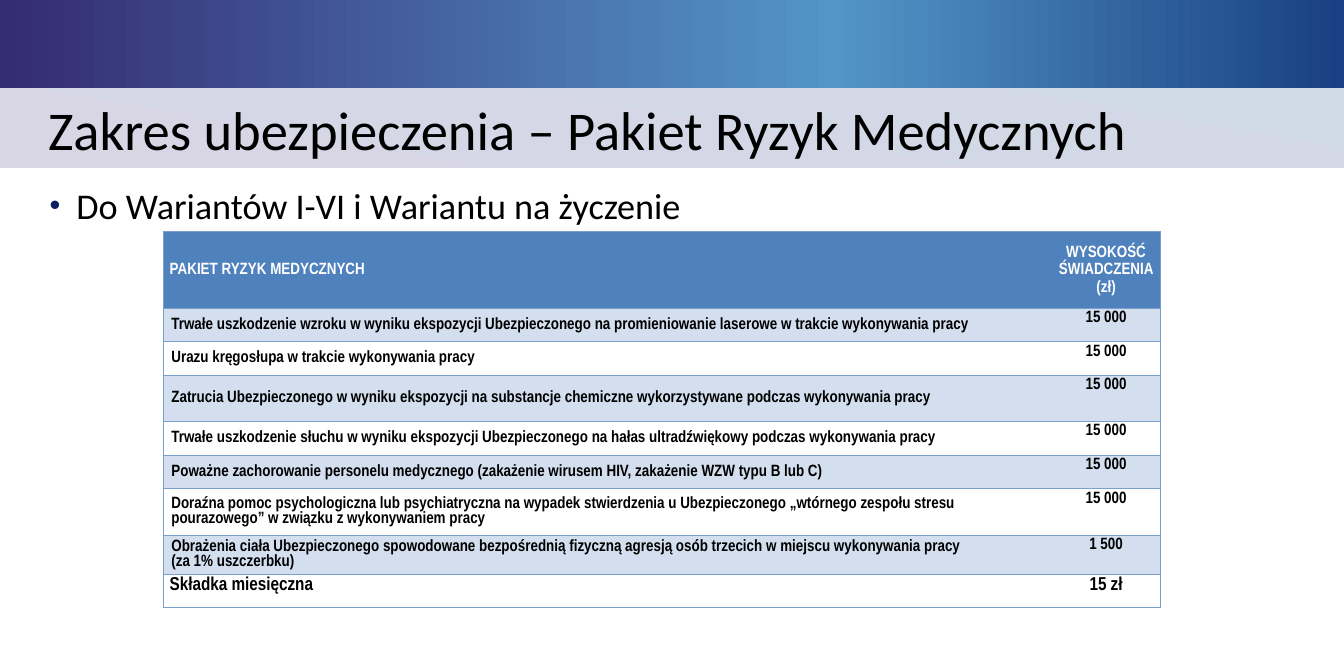
from lxml import etree
from pptx import Presentation
from pptx.dml.color import RGBColor
from pptx.enum.shapes import MSO_SHAPE
from pptx.enum.text import MSO_ANCHOR, MSO_AUTO_SIZE, PP_ALIGN
from pptx.oxml.ns import qn
from pptx.util import Inches, Pt

RECTANGLE = MSO_SHAPE.RECTANGLE
TOP, MIDDLE, BOTTOM = MSO_ANCHOR.TOP, MSO_ANCHOR.MIDDLE, MSO_ANCHOR.BOTTOM
LEFT, CENTER, JUSTIFY = PP_ALIGN.LEFT, PP_ALIGN.CENTER, PP_ALIGN.JUSTIFY
NO_FIT, GROW = MSO_AUTO_SIZE.NONE, MSO_AUTO_SIZE.SHAPE_TO_FIT_TEXT

BLACK = RGBColor(0x00, 0x00, 0x00)
WHITE = RGBColor(0xFF, 0xFF, 0xFF)
HEADER_BLUE = RGBColor(0x4F, 0x81, 0xBD)
ROW_BLUE = RGBColor(0xD3, 0xDF, 0xEE)
BORDER_BLUE = RGBColor(0x7B, 0xA0, 0xCD)
BULLET_NAVY = RGBColor(0x0A, 0x1E, 0x64)
PALE_BLUE = RGBColor(0xD0, 0xDA, 0xE7)
LAVENDER = RGBColor(0xD8, 0xD5, 0xE5)
VIOLET = RGBColor(0x35, 0x2C, 0x73)
SKY = RGBColor(0x53, 0x95, 0xC7)
NAVY = RGBColor(0x19, 0x40, 0x82)

TITLE_FONT, TABLE_FONT = "Calibri", "Arial Narrow"
SLIDE_WIDTH, SLIDE_HEIGHT = Inches(16), Inches(7.69)
COLUMN, ROW = SLIDE_WIDTH / 100, SLIDE_HEIGHT / 100

HEADER = ("PAKIET RYZYK MEDYCZNYCH", "WYSOKOŚĆ ŚWIADCZENIA (zł)")
BENEFITS = [
    (["Trwałe uszkodzenie wzroku w wyniku ekspozycji Ubezpieczonego na promieniowanie "
      "laserowe w trakcie wykonywania pracy"], "15 000"),
    (["Urazu kręgosłupa w trakcie wykonywania pracy"], "15 000"),
    (["Zatrucia Ubezpieczonego w wyniku ekspozycji na substancje chemiczne "
      "wykorzystywane podczas wykonywania pracy"], "15 000"),
    (["Trwałe uszkodzenie słuchu w wyniku ekspozycji Ubezpieczonego na hałas "
      "ultradźwiękowy podczas wykonywania pracy"], "15 000"),
    (["Poważne zachorowanie personelu medycznego (zakażenie wirusem HIV, "
      "zakażenie WZW typu B lub C)"], "15 000"),
    (["Doraźna pomoc psychologiczna lub psychiatryczna na wypadek stwierdzenia u "
      "Ubezpieczonego „wtórnego zespołu stresu pourazowego” w związku z "
      "wykonywaniem pracy"], "15 000"),
    (["Obrażenia ciała Ubezpieczonego spowodowane bezpośrednią fizyczną agresją "
      "osób trzecich w miejscu wykonywania pracy", "(za 1% uszczerbku)"], "1 500"),
]
PREMIUM = ("Składka miesięczna", "15 zł")
ROW_WEIGHTS = [0.92, 0.4, 0.4, 0.55, 0.4, 0.4, 0.55, 0.4, 0.4]
NAME_SHARE = 0.89


def grid_box(left, top, width, height):
    return [round(left * COLUMN), round(top * ROW), round(width * COLUMN), round(height * ROW)]


def place(shape, box):
    shape.left, shape.top, shape.width, shape.height = box


def add_run(paragraph, text, font_name, size, color, bold=False):
    run = paragraph.add_run()
    run.text = text
    run.font.name = font_name
    run.font.size = Pt(size)
    run.font.color.rgb = color
    run.font.bold = bold


def add_color(parent, color):
    etree.SubElement(parent, qn("a:srgbClr"), val=str(color))


def add_band(slide, box, stops, angle):
    band = slide.shapes.add_shape(RECTANGLE, *box)
    band.shadow.inherit = False
    band.line.fill.background()
    band.fill.gradient()
    band.fill.gradient_angle = -angle % 360
    stop_list = band.element.spPr.find(qn("a:gradFill")).find(qn("a:gsLst"))
    for stop in list(stop_list):
        stop_list.remove(stop)
    for percent, color in stops:
        add_color(etree.SubElement(stop_list, qn("a:gs"), pos=str(percent * 1000)), color)
    return band


def add_background(slide, title_box, top_box):
    bands = [
        add_band(slide, title_box, [(0, PALE_BLUE), (100, LAVENDER)], 100),
        add_band(slide, top_box, [(0, VIOLET), (62, SKY), (100, NAVY)], 0),
    ]
    tree = slide.shapes.element
    for position, band in enumerate(bands, start=2):
        tree.insert(position, band.element)


def fill_title(slide, box):
    title = slide.shapes.title
    place(title, box)
    frame = title.text_frame
    frame.auto_size = NO_FIT
    frame.vertical_anchor = BOTTOM
    paragraph = frame.paragraphs[0]
    paragraph.alignment = CENTER
    paragraph.line_spacing = 0.9
    add_run(paragraph, "Zakres ubezpieczenia – Pakiet Ryzyk Medycznych", TITLE_FONT, 46.8, BLACK)


def fill_body(slide, box):
    body = slide.placeholders[1]
    place(body, box)
    frame = body.text_frame
    frame.auto_size = GROW
    frame.vertical_anchor = TOP
    paragraph = frame.paragraphs[0]
    properties = paragraph._p.get_or_add_pPr()
    properties.set("marL", str(Inches(0.32)))
    properties.set("indent", str(-Inches(0.32)))
    add_color(etree.SubElement(properties, qn("a:buClr")), BULLET_NAVY)
    etree.SubElement(properties, qn("a:buSzPct"), val="85000")
    etree.SubElement(properties, qn("a:buFont"), typeface="Arial")
    etree.SubElement(properties, qn("a:buChar"), char="•")
    paragraph.alignment = JUSTIFY
    paragraph.line_spacing = 1.3
    paragraph.space_before = Pt(0)
    add_run(paragraph, "Do Wariantów I-VI i Wariantu na życzenie", TITLE_FONT, 31, BLACK)


def set_borders(cell, hidden_side):
    properties = cell._tc.get_or_add_tcPr()
    for side in ("lnL", "lnR", "lnT", "lnB"):
        line = etree.SubElement(properties, qn(f"a:{side}"), w=str(Pt(1)))
        if side == hidden_side:
            etree.SubElement(line, qn("a:noFill"))
        else:
            add_color(etree.SubElement(line, qn("a:solidFill")), BORDER_BLUE)


def fill_cell(cell, lines, alignment, anchor, spacing, margins, size, color, fill):
    set_borders(cell, "lnL" if alignment == CENTER else "lnR")
    if fill is None:
        cell.fill.background()
    else:
        cell.fill.solid()
        cell.fill.fore_color.rgb = fill
    cell.vertical_anchor = anchor
    cell.margin_left, cell.margin_right = map(Inches, margins)
    cell.margin_top = cell.margin_bottom = 0
    frame = cell.text_frame
    for index, text in enumerate(lines):
        paragraph = frame.add_paragraph() if index else frame.paragraphs[0]
        paragraph.alignment = alignment
        paragraph.line_spacing = spacing
        add_run(paragraph, text, TABLE_FONT, size, color, True)


def add_benefit_table(slide, box):
    table = slide.shapes.add_table(len(ROW_WEIGHTS), 2, *box).table
    table.first_row = table.horz_banding = False
    width, height = box[2:]
    table.columns[0].width = round(width * NAME_SHARE)
    table.columns[1].width = width - table.columns[0].width
    for row, weight in zip(table.rows, ROW_WEIGHTS):
        row.height = round(height * weight / sum(ROW_WEIGHTS))

    even, flush = (0.07, 0.07), (0.09, 0)
    for column, (text, alignment) in enumerate(zip(HEADER, (LEFT, CENTER))):
        fill_cell(table.cell(0, column), [text], alignment, MIDDLE, 1.15, even, 14, WHITE, HEADER_BLUE)
    for row, (lines, amount) in enumerate(BENEFITS, start=1):
        fill = ROW_BLUE if row % 2 else None
        fill_cell(table.cell(row, 0), lines, LEFT, MIDDLE, 1.0, flush, 14, BLACK, fill)
        fill_cell(table.cell(row, 1), [amount], CENTER, TOP, 1.15, even, 14, BLACK, fill)
    last = len(ROW_WEIGHTS) - 1
    for column, (text, alignment) in enumerate(zip(PREMIUM, (LEFT, CENTER))):
        fill_cell(table.cell(last, column), [text], alignment, TOP, 1.15, even, 16, BLACK, None)


def main():
    presentation = Presentation()
    presentation.slide_width, presentation.slide_height = SLIDE_WIDTH, SLIDE_HEIGHT
    slide = presentation.slides.add_slide(presentation.slide_layouts[1])
    add_background(slide, grid_box(0, 9.49, 100, 16.51), grid_box(0, -0.52, 100, 14.17))
    fill_title(slide, grid_box(1, 5.07, 85.38, 20.68))
    fill_body(slide, grid_box(3.06, 25.75, 90.19, 9.36))
    add_benefit_table(slide, grid_box(12.19, 35.76, 74.19, 57.48))
    presentation.save("out.pptx")


if __name__ == "__main__":
    main()
